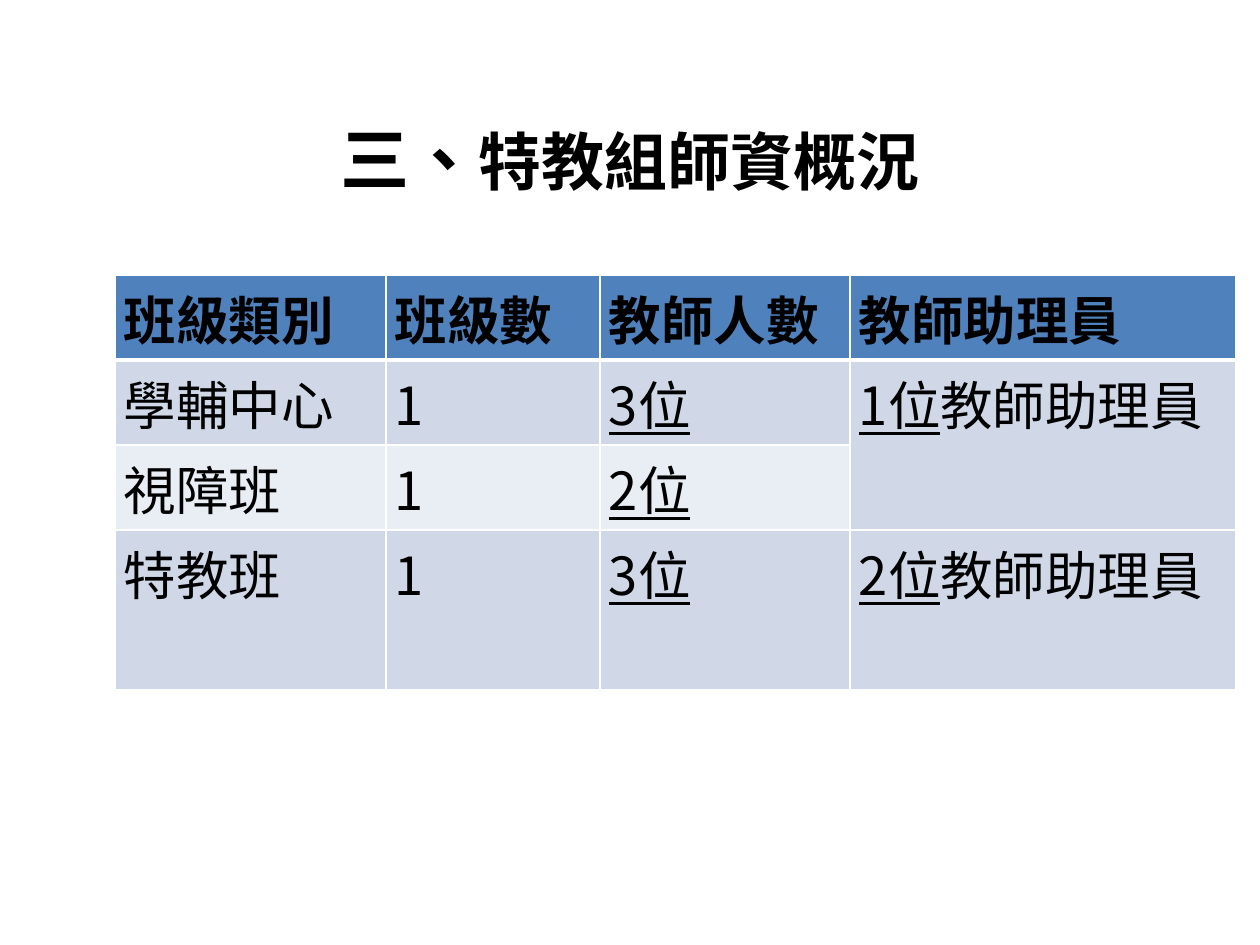
from lxml import etree
from pptx import Presentation
from pptx.dml.color import RGBColor
from pptx.enum.text import MSO_ANCHOR, PP_ALIGN
from pptx.oxml.ns import qn
from pptx.util import Pt

PX = 914400 / 126
FONT = "Noto Sans CJK SC"
BLACK = RGBColor(0x00, 0x00, 0x00)
WHITE = RGBColor(0xFF, 0xFF, 0xFF)
HEADER_BLUE = RGBColor(0x4F, 0x81, 0xBD)
BAND_DARK = RGBColor(0xD0, 0xD8, 0xE8)
BAND_LIGHT = RGBColor(0xE9, 0xED, 0xF4)
TOP, MIDDLE_ALIGN, LEFT_ALIGN = MSO_ANCHOR.TOP, PP_ALIGN.CENTER, PP_ALIGN.LEFT


def px(length):
    return round(length * PX)


def write(paragraph, text, size=30, bold=False, underline=False, align=LEFT_ALIGN):
    paragraph.alignment = align
    run = paragraph.add_run()
    run.text = text
    run.font.size = Pt(size)
    run.font.bold = bold
    run.font.underline = underline
    run.font.color.rgb = BLACK
    run.font.name = FONT
    properties = run.font._element
    properties.set("lang", "zh-TW")
    properties.find(qn("a:latin")).addnext(
        etree.Element(qn("a:ea"), typeface=FONT))


prs = Presentation()
prs.slide_width, prs.slide_height = px(1260), px(945)
slide = prs.slides.add_slide(prs.slide_layouts[6])

# Title, set low in its box
title = slide.shapes.add_textbox(px(63), px(38), px(1134), px(157)).text_frame
title.word_wrap = True
title.vertical_anchor = TOP
title.margin_top, title.margin_bottom = px(78), 0
heading = title.paragraphs[0]
write(heading, "三、", size=39.6, bold=True, align=MIDDLE_ALIGN)
write(heading, "特教組師資概況", size=36, bold=True, align=MIDDLE_ALIGN)

# Staffing table: each cell is (underlined part, plain part)
staffing = [
    [("", "班級類別"), ("", "班級數"), ("", "教師人數"), ("", "教師助理員")],
    [("", "學輔中心"), ("", "1"), ("3位", ""), ("1位", "教師助理員")],
    [("", "視障班"), ("", "1"), ("2位", ""), ("", "")],
    [("", "特教班"), ("", "1"), ("3位", ""), ("2位", "教師助理員")],
]
row_fills = [HEADER_BLUE, BAND_DARK, BAND_LIGHT, BAND_DARK]
column_widths = [271, 214, 250, 386]
row_heights = [85, 85, 85, 160]

table = slide.shapes.add_table(
    len(row_heights), len(column_widths), px(115), px(275),
    px(sum(column_widths)), px(sum(row_heights))).table
table.horz_banding = False
for column, width in zip(table.columns, column_widths):
    column.width = px(width)
for row, height in zip(table.rows, row_heights):
    row.height = px(height)
table.cell(1, 3).merge(table.cell(2, 3))

for r, entries in enumerate(staffing):
    for c, (counted, plain) in enumerate(entries):
        cell = table.cell(r, c)
        cell.margin_left = cell.margin_right = px(9)
        cell.margin_top = cell.margin_bottom = px(5)
        cell.vertical_anchor = TOP
        cell.fill.solid()
        cell.fill.fore_color.rgb = row_fills[r]
        for text, underlined in ((counted, True), (plain, False)):
            if text:
                write(cell.text_frame.paragraphs[0], text,
                      bold=r == 0, underline=underlined)

        # White borders, thicker below the header
        for i, side in enumerate(("lnL", "lnR", "lnT", "lnB")):
            below_header = (r, side) in ((0, "lnB"), (1, "lnT"))
            line = etree.Element(qn("a:" + side), w=str(Pt(3 if below_header else 1)))
            fill = etree.SubElement(line, qn("a:solidFill"))
            etree.SubElement(fill, qn("a:srgbClr"), val=str(WHITE))
            cell._tc.get_or_add_tcPr().insert(i, line)

prs.save("out.pptx")
